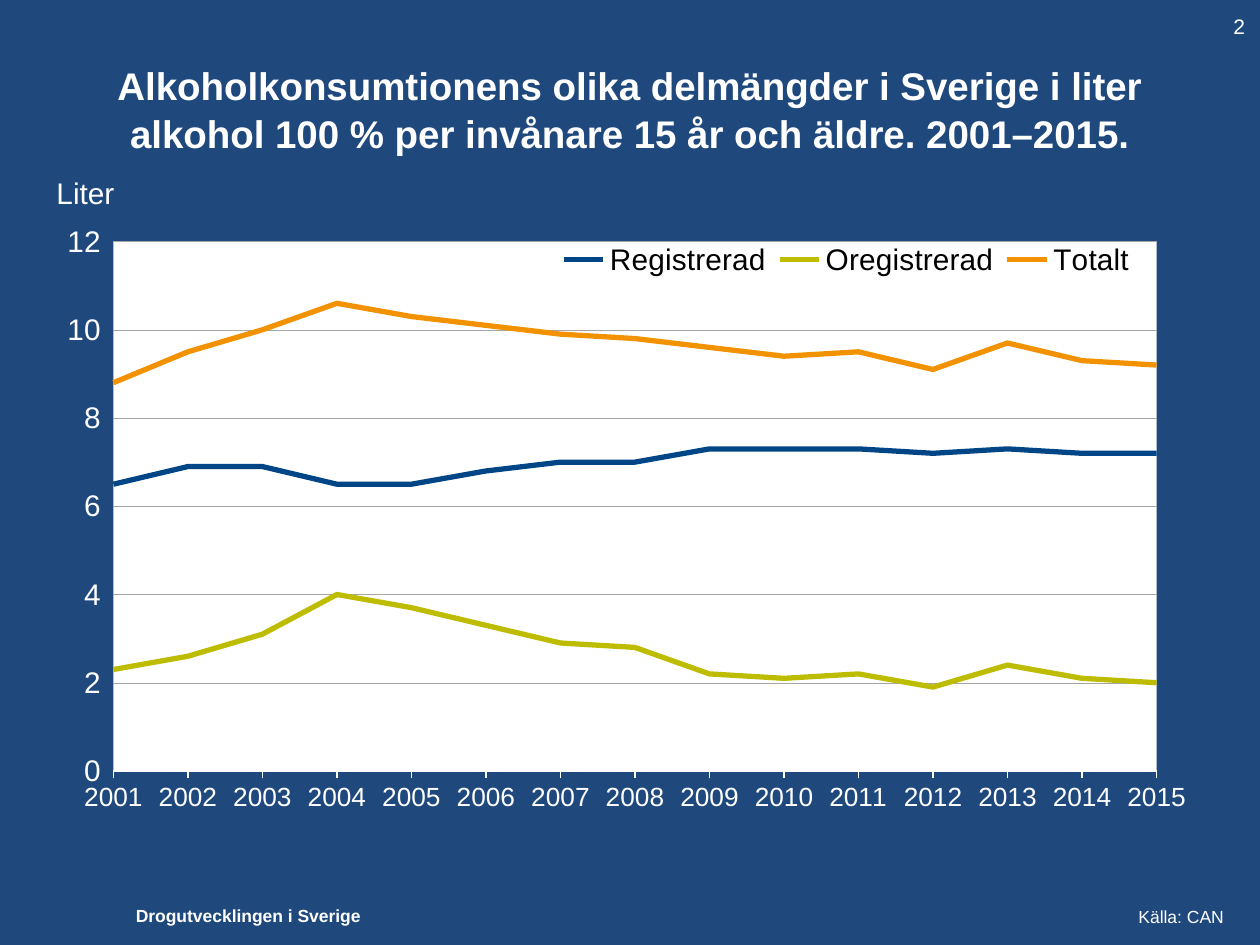
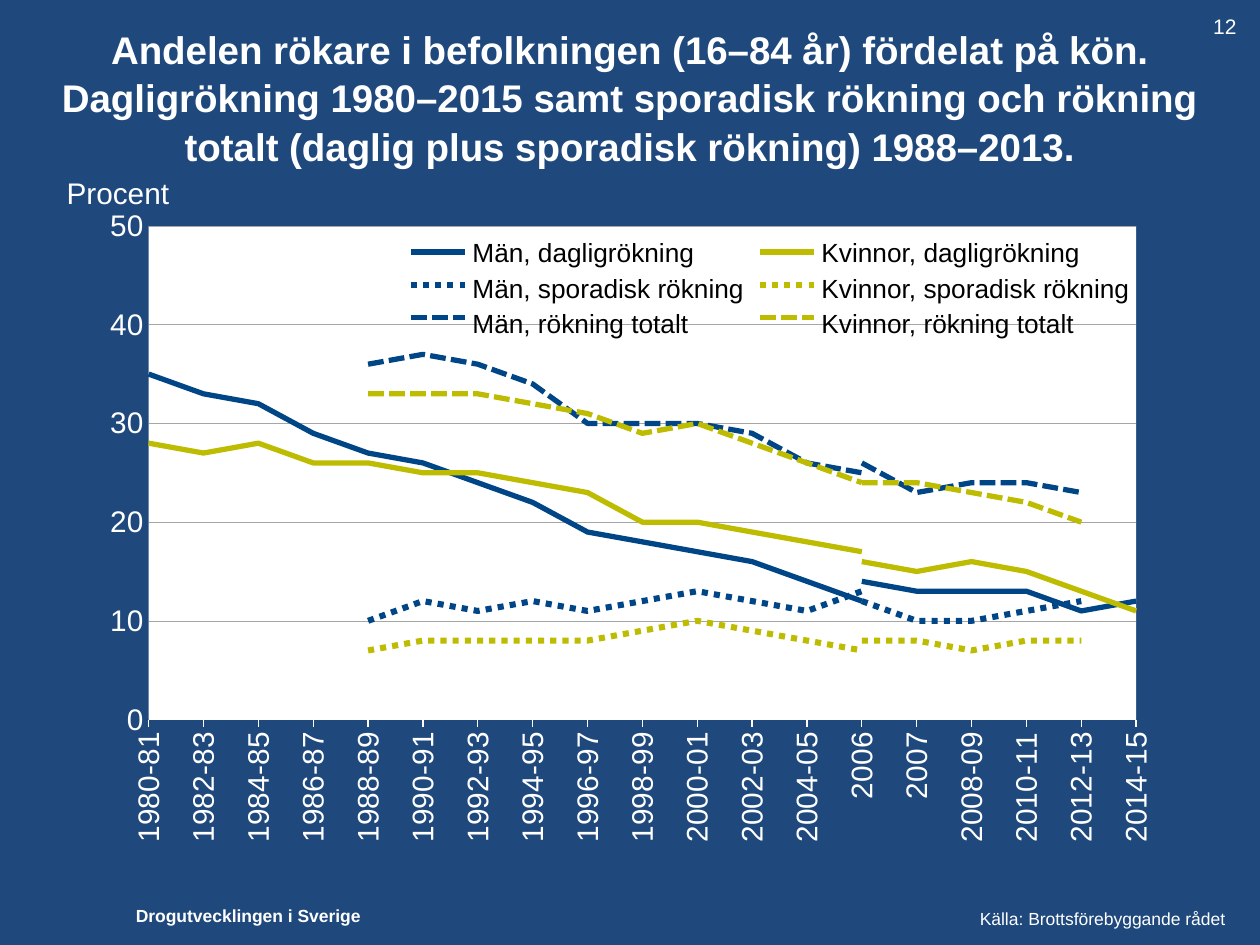
"""Two slides of line charts on alcohol and smoking in Sweden."""
from dataclasses import dataclass
from pptx import Presentation
from pptx import util as u
from pptx.chart.data import CategoryChartData
from pptx.dml.color import RGBColor as RGB
from pptx.enum import chart as ch, dml, shapes, text
from pptx.oxml import parse_xml
from pptx.oxml.ns import nsdecls, qn


@dataclass(frozen=True)
class Theme:
    font: str = "Arial"
    back: RGB = RGB.from_string("1F497D")
    white: RGB = RGB.from_string("FFFFFF")
    black: RGB = RGB.from_string("000000")
    grid: RGB = RGB.from_string("A6A6A6")
    navy: RGB = RGB.from_string("004687")
    lime: RGB = RGB.from_string("BEBC00")
    gold: RGB = RGB.from_string("F29200")
    head: int = 22
    axis: int = 17
    key: int = 15
    page: int = 12
    foot: int = 10


def cells(*spans):
    return [u.Inches(span / 10) for span in spans]


def label(slide, box, words, size, bold=False, color=None, align=None):
    frame = slide.shapes.add_textbox(*cells(*box)).text_frame
    frame.word_wrap = True
    frame.text = words
    for par in frame.paragraphs:
        par.alignment = align
        font = par.font
        font.name, font.size, font.bold = theme.font, u.Pt(size), bold
        font.color.rgb = color or theme.white
    return frame


theme = Theme()
right = text.PP_ALIGN.RIGHT
dash, dot = dml.MSO_LINE.SQUARE_DOT, dml.MSO_LINE.ROUND_DOT
styles = [(3, None), (3.5, dot), (3, dash)]
solid, dotted, dashed = styles

alcohol = [
    ("Registrerad", theme.navy, solid, 0,
     [6.5, 6.9, 6.9, 6.5, 6.5, 6.8, 7, 7, 7.3, 7.3, 7.3, 7.2, 7.3, 7.2, 7.2]),
    ("Oregistrerad", theme.lime, solid, 0,
     [2.3, 2.6, 3.1, 4, 3.7, 3.3, 2.9, 2.8, 2.2, 2.1, 2.2, 1.9, 2.4, 2.1, 2]),
    ("Totalt", theme.gold, solid, 0,
     [8.8, 9.5, 10, 10.6, 10.3, 10.1, 9.9, 9.8, 9.6, 9.4, 9.5, 9.1, 9.7, 9.3, 9.2]),
]
rates = [
    (theme.navy, solid, 0, [35, 33, 32, 29, 27, 26, 24, 22, 19, 18, 17, 16, 14, 12]),
    (theme.navy, solid, 13, [14, 13, 13, 13, 11, 12]),
    (theme.navy, dashed, 4, [36, 37, 36, 34, 30, 30, 30, 29, 26, 25]),
    (theme.navy, dashed, 13, [26, 23, 24, 24, 23]),
    (theme.navy, dotted, 4, [10, 12, 11, 12, 11, 12, 13, 12, 11, 13]),
    (theme.navy, dotted, 13, [12, 10, 10, 11, 12]),
    (theme.lime, solid, 0, [28, 27, 28, 26, 26, 25, 25, 24, 23, 20, 20, 19, 18, 17]),
    (theme.lime, solid, 13, [16, 15, 16, 15, 13, 11]),
    (theme.lime, dashed, 4, [33, 33, 33, 32, 31, 29, 30, 28, 26, 24]),
    (theme.lime, dashed, 13, [24, 24, 23, 22, 20]),
    (theme.lime, dotted, 4, [7, 8, 8, 8, 8, 9, 10, 9, 8, 7]),
    (theme.lime, dotted, 13, [8, 8, 7, 8, 8]),
]
smoking = [(f"Series {num}", *rate) for num, rate in enumerate(rates, 1)]
spans = [f"{year}-{(year + 1) % 100:02}" for year in range(1980, 2016, 2)]
spans[13:14] = ["2006", "2007"]

pages = [
    dict(
        title="Alkoholkonsumtionens olika delmängder i Sverige i liter alkohol 100 % "
              "per invånare 15 år och äldre. 2001–2015.",
        head=(5, 3, 90, 11.1), num="2", numbox=(96.9, 0.6, 2.7, 3),
        unit="Liter", unitbox=(3.5, 13.3, 9.3, 3.9),
        source="Källa: CAN", sourcebox=(73.3, 71.4, 24.8, 2.7),
        box=(3.1, 16.4, 92.2, 49.5), plot=(0.064, 0.056, 0.898, 0.849),
        cats=[str(year) for year in range(2001, 2016)], rows=alcohol,
        top=12, step=2, form="0", turn=0, size=theme.key,
        tick=ch.XL_TICK_MARK.OUTSIDE, key=(0.44, 0.04, 0.51, 0.09)),
    dict(
        title="Andelen rökare i befolkningen (16–84 år) fördelat på kön. Dagligrökning "
              "1980–2015 samt sporadisk rökning och rökning totalt (daglig plus "
              "sporadisk rökning) 1988–2013.",
        head=(0, 1.4, 100, 12.5), num="12", numbox=(95.3, 0.6, 4.7, 3),
        unit="Procent", unitbox=(4.3, 13.3, 10.3, 3.9),
        source="Källa: Brottsförebyggande rådet", sourcebox=(70.3, 71.6, 27.9, 2.7),
        box=(6.6, 15.7, 86.7, 53.3), plot=(0.06, 0.042, 0.904, 0.735),
        cats=spans, rows=smoking,
        top=50, step=10, form="###0", turn=-90, size=theme.axis,
        tick=ch.XL_TICK_MARK.NONE, key=None),
]

prs = Presentation()
prs.slide_width, prs.slide_height = cells(100, 75)
fill = prs.slide_master.background.fill
fill.solid()
fill.fore_color.rgb = theme.back

for page in pages:
    slide = prs.slides.add_slide(prs.slide_layouts[5])
    title = slide.shapes.title
    title.left, title.top, title.width, title.height = cells(*page["head"])
    frame = title.text_frame
    frame.text = page["title"]
    frame.auto_size = text.MSO_AUTO_SIZE.NONE
    frame.vertical_anchor = text.MSO_ANCHOR.MIDDLE
    par = frame.paragraphs[0]
    par.alignment, par.line_spacing = text.PP_ALIGN.CENTER, 1.05
    font = par.runs[0].font
    font.name, font.size, font.bold = theme.font, u.Pt(theme.head), True
    font.color.rgb = theme.white

    data = CategoryChartData()
    data.categories = page["cats"]
    for name, tone, style, start, vals in page["rows"]:
        rest = len(page["cats"]) - start - len(vals)
        data.add_series(name, [None] * start + vals + [None] * rest)
    chart = slide.shapes.add_chart(
        ch.XL_CHART_TYPE.LINE, *cells(*page["box"]), data).chart
    chart.has_title = False
    chart.font.name, chart.font.size = theme.font, u.Pt(theme.axis)
    chart.font.color.rgb = theme.white
    chart.plots[0].vary_by_categories = False
    for line, (name, tone, (width, dashes), *rest) in zip(chart.series, page["rows"]):
        line.smooth = False
        pen = line.format.line
        pen.color.rgb, pen.width = tone, u.Pt(width)
        if dashes:
            pen.dash_style = dashes

    axis, scale = chart.category_axis, chart.value_axis
    for old in scale._element.findall(qn("c:crossBetween")):
        scale._element.remove(old)
    scale._element.append(
        parse_xml(f'<c:crossBetween {nsdecls("c")} val="midCat"/>'))
    scale.minimum_scale, scale.maximum_scale = 0, page["top"]
    scale.major_unit = page["step"]
    scale.major_tick_mark = page["tick"]
    scale.format.line.fill.background()
    rule = scale.major_gridlines.format.line
    rule.color.rgb, rule.width = theme.grid, u.Pt(0.25)
    scale.tick_labels.number_format = page["form"]
    scale.tick_labels.number_format_is_linked = False
    axis.major_tick_mark = ch.XL_TICK_MARK.OUTSIDE
    axis.format.line.color.rgb, axis.format.line.width = theme.white, u.Pt(0.75)
    for side, size in (axis, page["size"]), (scale, theme.axis):
        font = side.tick_labels.font
        font.name, font.size, font.bold = theme.font, u.Pt(size), False
        font.color.rgb = theme.white
    body = axis._element.find(qn("c:txPr")).find(qn("a:bodyPr"))
    body.set("rot", str(page["turn"] * 60000))
    body.set("vert", "horz")

    root = chart._chartSpace
    area = root.chart.plotArea
    area.append(parse_xml(
        f'<c:spPr {nsdecls("c", "a")}><a:solidFill><a:srgbClr val="{theme.white}"/>'
        '</a:solidFill></c:spPr>'))
    root.chart.addnext(parse_xml(
        f'<c:spPr {nsdecls("c", "a")}><a:noFill/><a:ln><a:noFill/></a:ln></c:spPr>'))
    spots = [(area, 0, '<c:layoutTarget val="inner"/>', page["plot"])]
    chart.has_legend = bool(page["key"])
    if page["key"]:
        legend = chart.legend
        legend.position = ch.XL_LEGEND_POSITION.TOP
        legend.include_in_layout = True
        legend.font.name, legend.font.size = theme.font, u.Pt(theme.axis)
        legend.font.bold = False
        legend.font.color.rgb = theme.black
        spots.append((legend._element, 1, "", page["key"]))
    for node, index, target, (x, y, w, h) in spots:
        for old in node.findall(qn("c:layout")):
            node.remove(old)
        node.insert(index, parse_xml(
            f'<c:layout {nsdecls("c")}><c:manualLayout>{target}'
            '<c:xMode val="edge"/><c:yMode val="edge"/>'
            f'<c:x val="{x}"/><c:y val="{y}"/><c:w val="{w}"/><c:h val="{h}"/>'
            '</c:manualLayout></c:layout>'))

    label(slide, page["numbox"], page["num"], theme.page)
    unit = label(slide, page["unitbox"], page["unit"], theme.axis)
    unit.vertical_anchor = text.MSO_ANCHOR.MIDDLE
    label(slide, page["sourcebox"], page["source"], theme.foot, align=right)
    label(slide, (9.8, 71.3, 22, 2.7), "Drogutvecklingen i Sverige", theme.foot, True)

kinds = ["dagligrökning", "sporadisk rökning", "rökning totalt"]
for col, (who, tone) in enumerate([("Män", theme.navy), ("Kvinnor", theme.lime)]):
    left = 32.6 + 27.7 * col
    words = "\n".join(f"{who}, {kind}" for kind in kinds)
    frame = label(slide, (left + 4.9, 18, 26, 8.6), words, theme.key, color=theme.black)
    frame.word_wrap = False
    frame.margin_left = frame.margin_right = 0
    for par in frame.paragraphs:
        par.line_spacing = 1.12
    for row, (width, dashes) in enumerate(styles):
        y = 20 + 2.6 * row
        mark = slide.shapes.add_connector(
            shapes.MSO_CONNECTOR.STRAIGHT, *cells(left, y, left + 4.3, y))
        mark.line.color.rgb, mark.line.width = tone, u.Pt(width)
        if dashes:
            mark.line.dash_style = dashes
        mark._element.spPr.append(parse_xml(f'<a:effectLst {nsdecls("a")}/>'))

prs.save("out.pptx")
